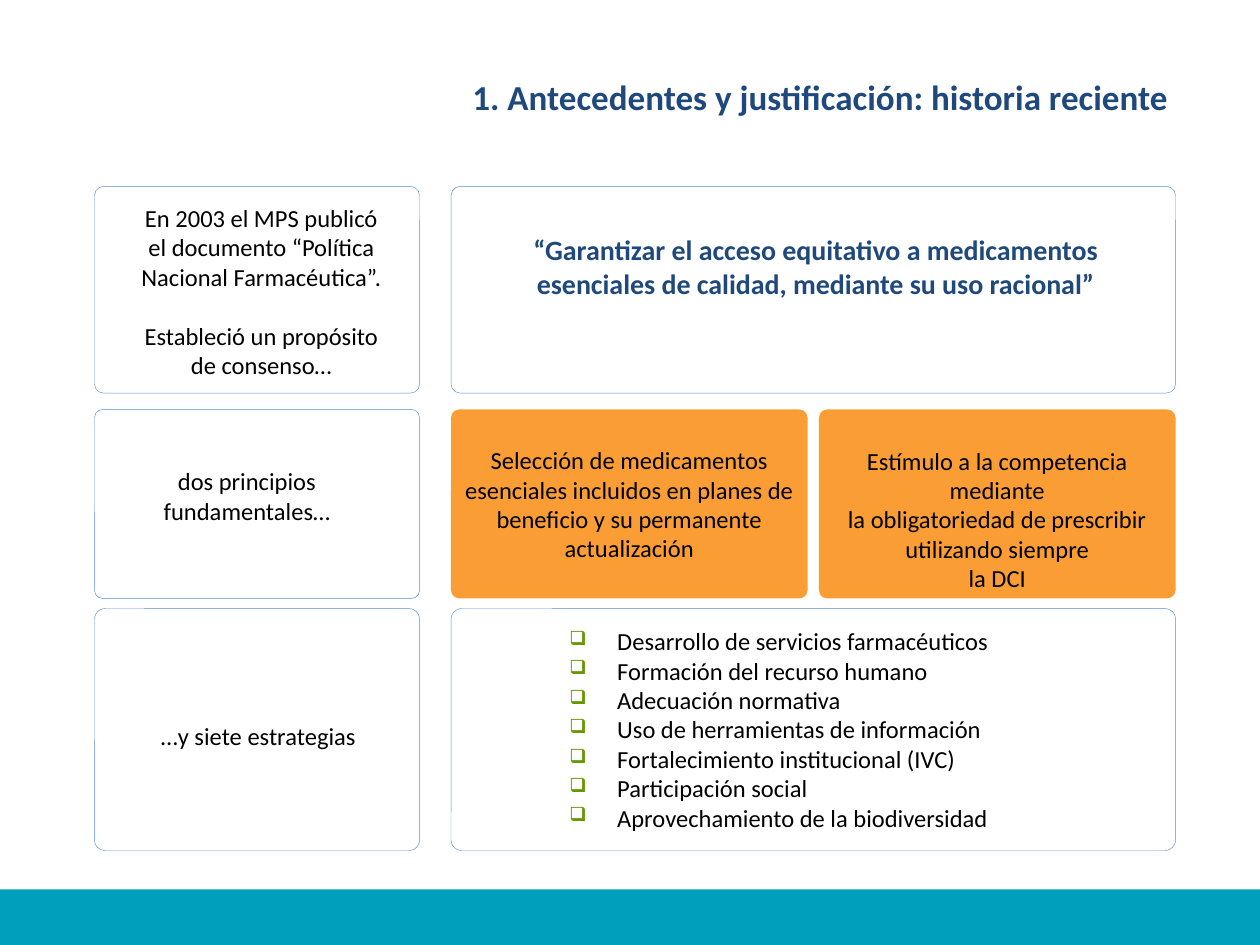
from lxml import etree
from pptx import Presentation
from pptx.dml.color import RGBColor
from pptx.enum import shapes, text
from pptx.oxml.ns import qn
from pptx.util import Inches, Pt

COLORS = {"band": "00A0BA", "navy": "1F497D", "orange": "FB9D35",
          "outline": "558ED5", "bullet": "669900", "black": "000000"}
FONT = "Calibri"
CENTER, LEFT, RIGHT = text.PP_ALIGN.CENTER, text.PP_ALIGN.LEFT, text.PP_ALIGN.RIGHT

TITLE = "1. Antecedentes y justificación: historia reciente"
PURPOSE_INTRO = ["En 2003 el MPS publicó el documento “Política Nacional Farmacéutica”.",
                 "Estableció un propósito de consenso…"]
PURPOSE = ["“Garantizar el acceso equitativo a medicamentos esenciales de calidad, "
           "mediante su uso racional”"]
PRINCIPLES_INTRO = ["dos principios fundamentales…"]
PRINCIPLES = [  # paragraphs, top inset, bottom inset
    (["Selección de medicamentos esenciales incluidos en planes de beneficio "
      "y su permanente actualización"], 0.08, 0.08),
    (["Estímulo a la competencia mediante", "la obligatoriedad de prescribir",
      "utilizando siempre", "la DCI"], 0.26, 0.02),
]
STRATEGIES_INTRO = ["…y siete estrategias"]
STRATEGIES = ["Desarrollo de servicios farmacéuticos", "Formación del recurso humano",
              "Adecuación normativa", "Uso de herramientas de información",
              "Fortalecimiento institucional (IVC)", "Participación social",
              "Aprovechamiento de la biodiversidad"]

ROWS = [(1.48, 1.64), (3.25, 1.5), (4.83, 1.92)]   # top, height
COLUMNS = [(0.75, 2.58), (3.58, 5.75)]             # left, width
PRINCIPLE_WIDTH, PRINCIPLE_GAP = 2.83, 0.09
CORNER = 0.044


def color(name):
    return RGBColor.from_string(COLORS[name])


def add_panel(slide, left, top, width, height, fill=None, kind=shapes.MSO_SHAPE.ROUNDED_RECTANGLE):
    """Add a filled panel, or an outlined one when no fill is given."""
    panel = slide.shapes.add_shape(kind, Inches(left), Inches(top), Inches(width), Inches(height))
    panel.shadow.inherit = False
    if kind == shapes.MSO_SHAPE.ROUNDED_RECTANGLE:
        panel.adjustments[0] = CORNER
    if fill:
        panel.fill.solid()
        panel.fill.fore_color.rgb = color(fill)
        panel.line.fill.background()
    else:
        panel.fill.background()
        panel.line.color.rgb = color("outline")
        panel.line.width = Pt(0.25)
    return panel


def add_bullet(paragraph):
    properties = paragraph._p.get_or_add_pPr()
    properties.set("marL", str(Inches(0.38)))
    properties.set("indent", str(-Inches(0.38)))
    bullet_color = etree.SubElement(properties, qn("a:buClr"))
    etree.SubElement(bullet_color, qn("a:srgbClr"), val=COLORS["bullet"])
    etree.SubElement(properties, qn("a:buSzPct"), val="79000")
    etree.SubElement(properties, qn("a:buChar"), char="❑")


def write(frame, lines, size=14, ink="black", bold=False, align=CENTER, gap=0, bullets=False):
    for index, line in enumerate(lines):
        paragraph = frame.add_paragraph() if index else frame.paragraphs[0]
        paragraph.text = line
        paragraph.alignment = align
        if index and gap:
            paragraph.space_before = Pt(gap)
        if bullets:
            add_bullet(paragraph)
        font = paragraph.font
        font.name, font.size, font.bold = FONT, Pt(size), bold
        font.color.rgb = color(ink)


def add_text(slide, left, top, width, height, lines, **style):
    frame = slide.shapes.add_textbox(Inches(left), Inches(top), Inches(width),
                                     Inches(height)).text_frame
    frame.word_wrap = True
    write(frame, lines, **style)


def main():
    deck = Presentation()
    deck.slide_width, deck.slide_height = Inches(10), Inches(7.5)
    slide = deck.slides.add_slide(deck.slide_layouts[5])

    title = slide.shapes.title
    title.left, title.top, title.width, title.height = map(Inches, (3.59, 0.55, 5.78, 0.44))
    title.text_frame.vertical_anchor = text.MSO_ANCHOR.TOP
    write(title.text_frame, [TITLE], size=20, ink="navy", bold=True, align=RIGHT)

    add_panel(slide, 0, 7.06, 10, 0.44, "band", shapes.MSO_SHAPE.RECTANGLE)

    for row, (top, height) in enumerate(ROWS):
        for column, (left, width) in enumerate(COLUMNS):
            if (row, column) != (1, 1):
                add_panel(slide, left, top, width, height)

    principles_left = COLUMNS[1][0]
    for index, (lines, inset_top, inset_bottom) in enumerate(PRINCIPLES):
        left = principles_left + index * (PRINCIPLE_WIDTH + PRINCIPLE_GAP)
        frame = add_panel(slide, left, ROWS[1][0], PRINCIPLE_WIDTH, ROWS[1][1],
                          "orange").text_frame
        frame.margin_left = frame.margin_right = Inches(0.02)
        frame.margin_top, frame.margin_bottom = Inches(inset_top), Inches(inset_bottom)
        frame.vertical_anchor = text.MSO_ANCHOR.MIDDLE
        frame.word_wrap = True
        write(frame, lines)

    add_text(slide, 0.98, 1.56, 2.19, 1.52, PURPOSE_INTRO, gap=17)
    add_text(slide, 3.81, 1.8, 5.33, 0.64, PURPOSE, size=16, ink="navy", bold=True)
    add_text(slide, 0.67, 3.65, 2.58, 0.58, PRINCIPLES_INTRO)
    add_text(slide, 1.14, 5.67, 1.82, 0.34, STRATEGIES_INTRO)
    add_text(slide, 4.42, 4.92, 4.08, 1.75, STRATEGIES, align=LEFT, bullets=True)

    deck.save("out.pptx")


if __name__ == "__main__":
    main()
